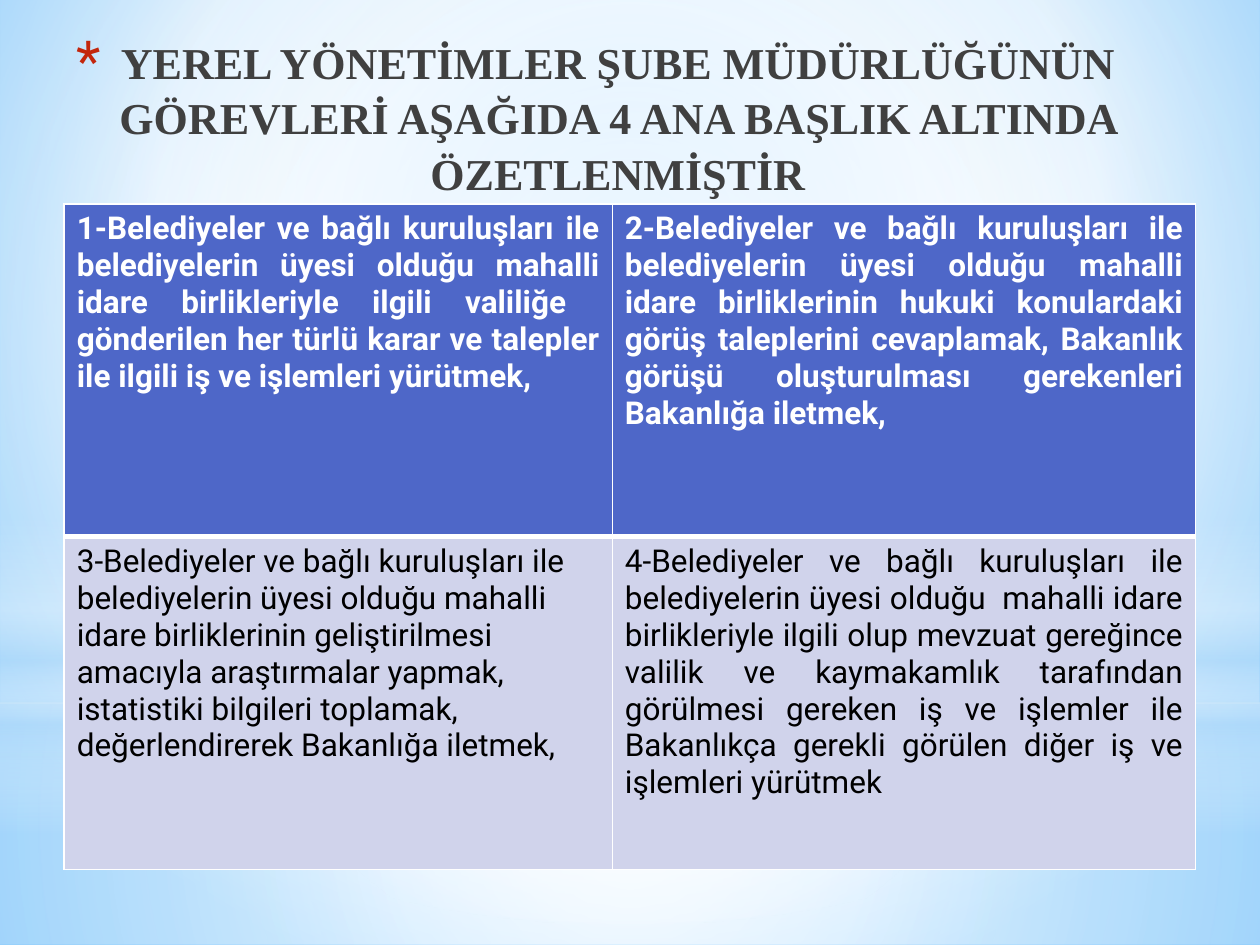
from lxml import etree
from pptx import Presentation
from pptx.dml.color import RGBColor
from pptx.enum.shapes import MSO_SHAPE as Shape
from pptx.enum.text import MSO_ANCHOR, PP_ALIGN as Align
from pptx.oxml import parse_xml
from pptx.oxml.ns import nsdecls, qn
from pptx.util import Inches, Pt

COLORS = {
    "white": "FFFFFF", "black": "000000", "title": "404040", "bullet": "C3260C",
    "header": "4E67C8", "body": "D0D3EB", "haze": "B4DCFA",
    "sky": "9ED5FF", "deep_sky": "5BB9FF",
}
CENTER = (50, 50, 50, 50)
TITLE = ("YEREL YÖNETİMLER ŞUBE MÜDÜRLÜĞÜNÜN GÖREVLERİ AŞAĞIDA "
         "4 ANA BAŞLIK ALTINDA ÖZETLENMİŞTİR")
DUTIES = [
    ["1-Belediyeler ve bağlı kuruluşları ile belediyelerin üyesi olduğu mahalli idare "
     "birlikleriyle ilgili valiliğe  gönderilen her türlü karar ve talepler ile ilgili "
     "iş ve işlemleri yürütmek,",
     "2-Belediyeler ve bağlı kuruluşları ile belediyelerin üyesi olduğu mahalli idare "
     "birliklerinin hukuki konulardaki görüş taleplerini cevaplamak, Bakanlık görüşü "
     "oluşturulması gerekenleri Bakanlığa iletmek,"],
    ["3-Belediyeler ve bağlı kuruluşları ile belediyelerin üyesi olduğu mahalli idare "
     "birliklerinin geliştirilmesi amacıyla araştırmalar yapmak, istatistiki bilgileri "
     "toplamak, değerlendirerek Bakanlığa iletmek,",
     "4-Belediyeler ve bağlı kuruluşları ile belediyelerin üyesi olduğu  mahalli idare "
     "birlikleriyle ilgili olup mevzuat gereğince valilik ve kaymakamlık tarafından "
     "görülmesi gereken iş ve işlemler ile Bakanlıkça gerekli görülen diğer iş ve "
     "işlemleri yürütmek"],
]


def rgb(name):
    return RGBColor.from_string(COLORS[name])


def set_gradient(parent, stops, focus=None):
    """Swap the solid fill in parent for (position, color, opacity) stops.

    The gradient is circular around focus, or vertical without one.
    """
    stop_xml = "".join(
        f'<a:gs pos="{position * 1000}"><a:srgbClr val="{COLORS[color]}">'
        f'<a:alpha val="{opacity * 1000}"/></a:srgbClr></a:gs>'
        for position, color, opacity in stops)
    if focus:
        edges = " ".join(f'{side}="{value * 1000}"' for side, value in zip("ltrb", focus))
        direction = f'<a:path path="circle"><a:fillToRect {edges}/></a:path>'
    else:
        direction = '<a:lin ang="5400000" scaled="0"/>'
    gradient = parse_xml(f'<a:gradFill {nsdecls("a")} rotWithShape="1">'
                         f'<a:gsLst>{stop_xml}</a:gsLst>{direction}</a:gradFill>')
    parent.replace(parent.find(qn("a:solidFill")), gradient)


def set_background(slide):
    slide.background.fill.solid()
    set_gradient(slide.element.find(".//" + qn("p:bgPr")),
                 [(0, "sky", 100), (60, "white", 100), (100, "deep_sky", 100)],
                 (20, 10, 20, 60))


def add_glow(slide, kind, top, height, stops, focus=None):
    """Add a full-width translucent shape."""
    shape = slide.shapes.add_shape(kind, 0, Inches(top), Inches(10), Inches(height))
    shape.shadow.inherit = False
    shape.line.fill.background()
    shape.fill.solid()
    set_gradient(shape._element.spPr, stops, focus)


def set_font(paragraph, name, size, color, bold):
    font = paragraph.font
    font.name, font.size, font.bold = name, Pt(size), bold
    font.color.rgb = rgb(color)


def add_bullet(paragraph, character, indent):
    properties = paragraph._p.get_or_add_pPr()
    properties.set("marL", str(Inches(indent)))
    properties.set("indent", str(-Inches(indent)))
    color = etree.SubElement(properties, qn("a:buClr"))
    etree.SubElement(color, qn("a:srgbClr"), val=COLORS["bullet"])
    etree.SubElement(properties, qn("a:buSzPct"), val="128000")
    etree.SubElement(properties, qn("a:buFont"), typeface="Roboto")
    etree.SubElement(properties, qn("a:buChar"), char=character)


def add_title(slide):
    box = slide.shapes.add_textbox(Inches(-0.35), Inches(0.21), Inches(10.16), Inches(1.25))
    frame = box.text_frame
    frame.word_wrap = True
    frame.vertical_anchor = MSO_ANCHOR.TOP
    paragraph = frame.paragraphs[0]
    paragraph.text = TITLE
    paragraph.alignment = Align.CENTER
    paragraph.line_spacing = 1.05
    add_bullet(paragraph, "*", 0.35)
    set_font(paragraph, "Times New Roman", 25.2, "title", True)


def set_borders(cell, widths):
    """Draw white borders; widths are left, right, top, bottom in points."""
    properties = cell._tc.get_or_add_tcPr()
    for index, (side, width) in enumerate(zip("LRTB", widths)):
        properties.insert(index, parse_xml(
            f'<a:ln{side} {nsdecls("a")} w="{Pt(width)}"><a:solidFill>'
            f'<a:srgbClr val="{COLORS["white"]}"/></a:solidFill></a:ln{side}>'))


def add_duties_table(slide):
    table = slide.shapes.add_table(2, 2, Inches(0.51), Inches(1.62),
                                   Inches(8.98), Inches(5.28)).table
    for column, width in zip(table.columns, (4.35, 4.63)):
        column.width = Inches(width)
    for row_index, texts in enumerate(DUTIES):
        header = row_index == 0
        for column_index, text in enumerate(texts):
            cell = table.cell(row_index, column_index)
            cell.fill.solid()
            cell.fill.fore_color.rgb = rgb("header" if header else "body")
            set_borders(cell, (1, 1, 1, 3) if header else (1, 1, 3, 1))
            paragraph = cell.text_frame.paragraphs[0]
            paragraph.text = text
            left_aligned = not header and column_index == 0
            paragraph.alignment = Align.LEFT if left_aligned else Align.JUSTIFY
            set_font(paragraph, "Roboto", 18, "white" if header else "black", header)


def main():
    presentation = Presentation()
    presentation.slide_width, presentation.slide_height = Inches(10), Inches(7.5)
    slide = presentation.slides.add_slide(presentation.slide_layouts[6])
    set_background(slide)
    add_glow(slide, Shape.RECTANGLE, 5.58, 1.92,
             [(0, "white", 91), (37, "white", 76), (100, "haze", 79)], CENTER)
    add_glow(slide, Shape.RECTANGLE, 0, 5.58,
             [(0, "white", 89), (48, "white", 62), (100, "haze", 79)], CENTER)
    add_glow(slide, Shape.RECTANGLE, 4.12, 2.5,
             [(0, "white", 0), (29, "white", 30), (45, "haze", 40),
              (55, "white", 26), (65, "haze", 60), (100, "white", 0)])
    add_glow(slide, Shape.OVAL, 1.75, 5.58,
             [(0, "white", 100), (56, "white", 0)], CENTER)
    add_title(slide)
    add_duties_table(slide)
    presentation.save("out.pptx")


if __name__ == "__main__":
    main()
